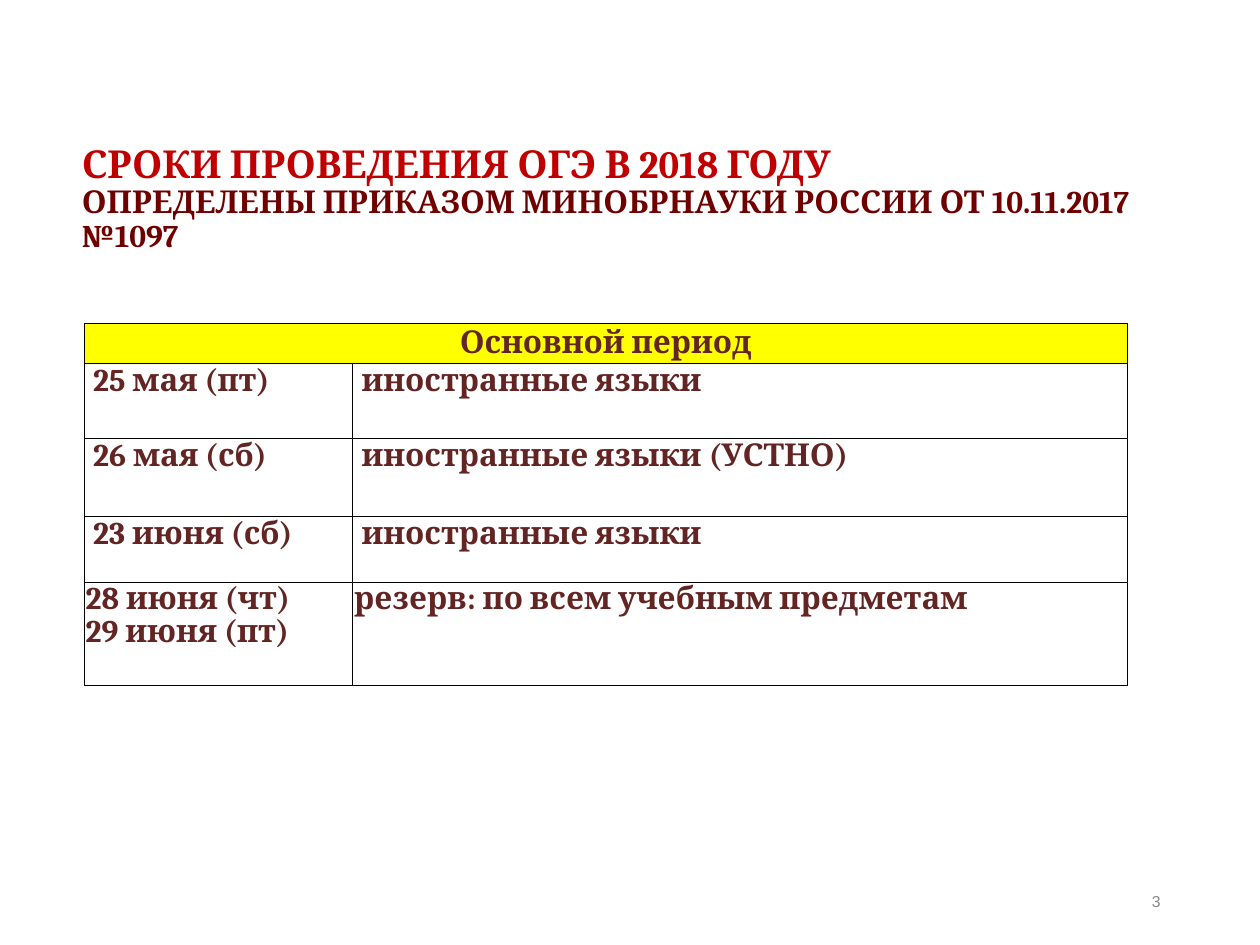
from lxml import etree
from pptx import Presentation
from pptx import util as u
from pptx.dml.color import RGBColor
from pptx.enum import text
from pptx.oxml import ns

RED = RGBColor(0xC0, 0x00, 0x00)
MAROON = RGBColor(0x70, 0x00, 0x00)
BROWN = RGBColor(0x63, 0x25, 0x23)
YELLOW = RGBColor(0xFF, 0xFF, 0x00)
GREY = RGBColor(0x89, 0x89, 0x89)

COLS = [2.13, 6.15]
ROWS = [0.31, 0.6, 0.62, 0.52, 0.82]
HEADER = "Основной период"
EXAMS = [
    ("25 мая (пт)", "иностранные языки"),
    ("26 мая (сб)", "иностранные языки (УСТНО)"),
    ("23 июня (сб)", "иностранные языки"),
    ("28 июня (чт)\n29 июня (пт)", "резерв: по всем учебным предметам"),
]


def assign(obj, **values):
    """Set each named attribute on the object."""
    for name, value in values.items():
        setattr(obj, name, value)


def style_font(font, size, color, name="Cambria", bold=True):
    """Format a font."""
    assign(font, size=u.Pt(size), name=name, bold=bold)
    font.color.rgb = color


def add_title(s, x, y, w, h):
    """Fill the title placeholder with a heading and a smaller second line."""
    sp = s.shapes.title
    assign(sp, left=u.Inches(x), top=u.Inches(y), width=u.Inches(w), height=u.Inches(h))
    tf = sp.text_frame
    assign(tf, word_wrap=True, auto_size=text.MSO_AUTO_SIZE.NONE,
           vertical_anchor=text.MSO_ANCHOR.TOP, margin_top=0)
    p = tf.paragraphs[0]
    assign(p, alignment=text.PP_ALIGN.LEFT, line_spacing=0.9)
    r = p.add_run()
    r.text = "СРОКИ ПРОВЕДЕНИЯ ОГЭ В 2018 ГОДУ"
    style_font(r.font, 22, RED)
    p.add_line_break()
    r = p.add_run()
    r.text = "ОПРЕДЕЛЕНЫ ПРИКАЗОМ МИНОБРНАУКИ РОССИИ ОТ 10.11.2017 №1097"
    style_font(r.font, 18, MAROON)


def add_borders(cell):
    """Draw a thin black line on every side of a cell."""
    tc_pr = cell._tc.get_or_add_tcPr()
    for i, side in enumerate(("lnL", "lnR", "lnT", "lnB")):
        ln = etree.Element(ns.qn(f"a:{side}"), w=str(u.Pt(0.5)))
        fill = etree.SubElement(ln, ns.qn("a:solidFill"))
        etree.SubElement(fill, ns.qn("a:srgbClr"), val="000000")
        tc_pr.insert(i, ln)


def fill_cell(cell, words, inset, top=0, align=text.PP_ALIGN.LEFT, spacing=None):
    """Write and format the text of a cell."""
    assign(cell, margin_left=u.Inches(inset), margin_right=u.Inches(inset),
           margin_top=u.Inches(top), margin_bottom=0)
    cell.text_frame.text = words
    for p in cell.text_frame.paragraphs:
        assign(p, alignment=align, line_spacing=spacing)
        for r in p.runs:
            style_font(r.font, 18, BROWN)


def add_schedule(s, x, y):
    """Place the exam table at the given corner."""
    table = s.shapes.add_table(len(ROWS), len(COLS), u.Inches(x), u.Inches(y),
                               u.Inches(sum(COLS)), u.Inches(sum(ROWS))).table
    assign(table, first_row=False, horz_banding=False)
    for col, width in zip(table.columns, COLS):
        col.width = u.Inches(width)
    for row, height in zip(table.rows, ROWS):
        row.height = u.Inches(height)
    for cell in table.iter_cells():
        cell.fill.background()
        add_borders(cell)
    head = table.cell(0, 0)
    head.merge(table.cell(0, 1))
    head.fill.solid()
    head.fill.fore_color.rgb = YELLOW
    fill_cell(head, HEADER, 0.01, 0.01, text.PP_ALIGN.CENTER)
    for i, exam in enumerate(EXAMS, 1):
        if i == len(EXAMS):
            layout = dict(inset=0.01, top=0.01, spacing=0.9)
        else:
            layout = dict(inset=0.07)
        for j, words in enumerate(exam):
            fill_cell(table.cell(i, j), words, **layout)


def add_number(s, x, y, w, h):
    """Place the page number in the given box."""
    tf = s.shapes.add_textbox(*map(u.Inches, (x, y, w, h))).text_frame
    assign(tf, word_wrap=True, vertical_anchor=text.MSO_ANCHOR.MIDDLE)
    p = tf.paragraphs[0]
    p.alignment = text.PP_ALIGN.RIGHT
    r = p.add_run()
    r.text = "3"
    style_font(r.font, 9, GREY, "Arial", False)


def main():
    """Build and save the slide."""
    prs = Presentation()
    assign(prs, slide_width=u.Inches(10), slide_height=u.Inches(7.5))
    s = prs.slides.add_slide(prs.slide_layouts[5])
    add_number(s, 7.06, 6.95, 2.25, 0.4)
    add_schedule(s, 0.67, 2.57)
    add_title(s, 0.55, 1.15, 9, 1.07)
    prs.save("out.pptx")


if __name__ == "__main__":
    main()
